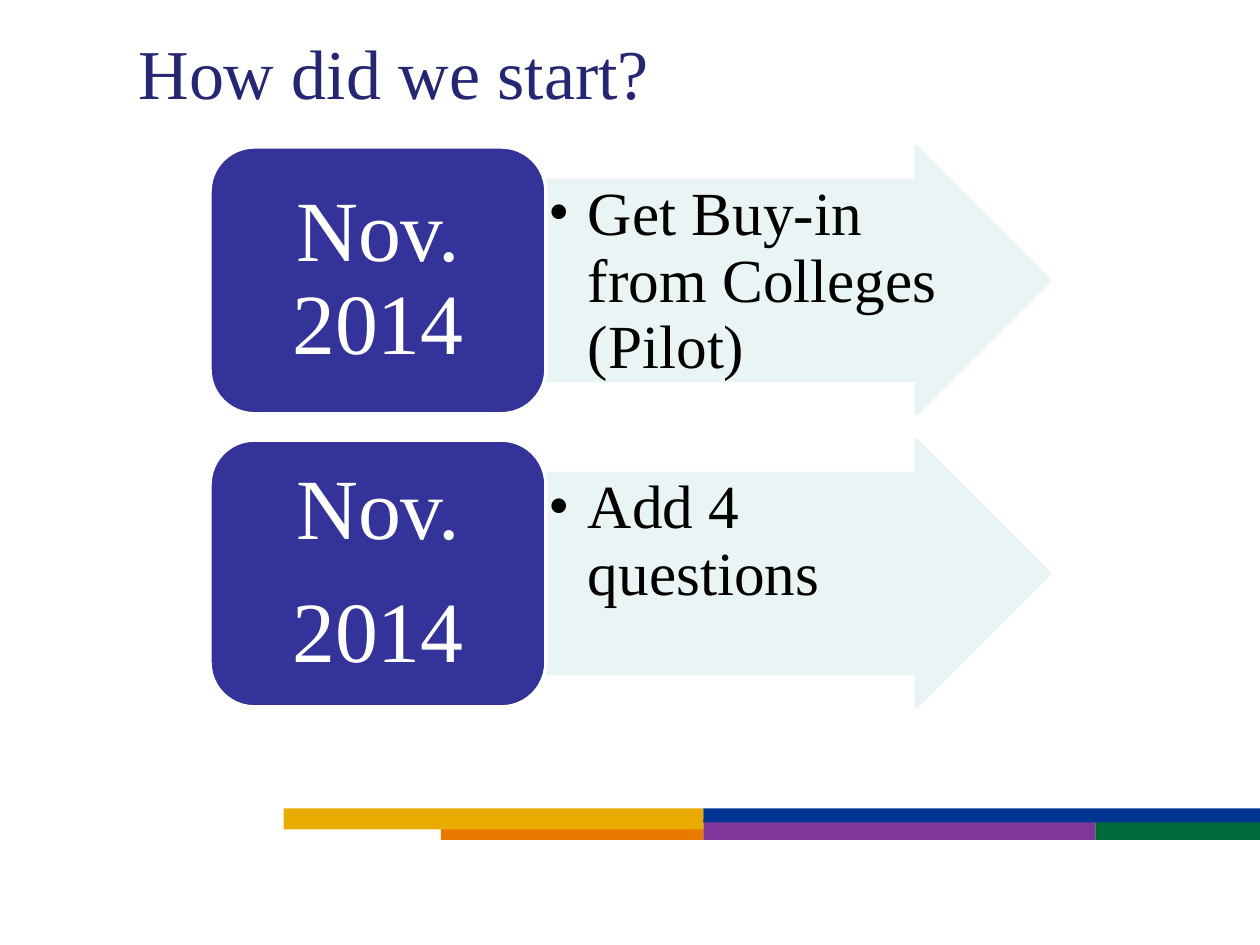
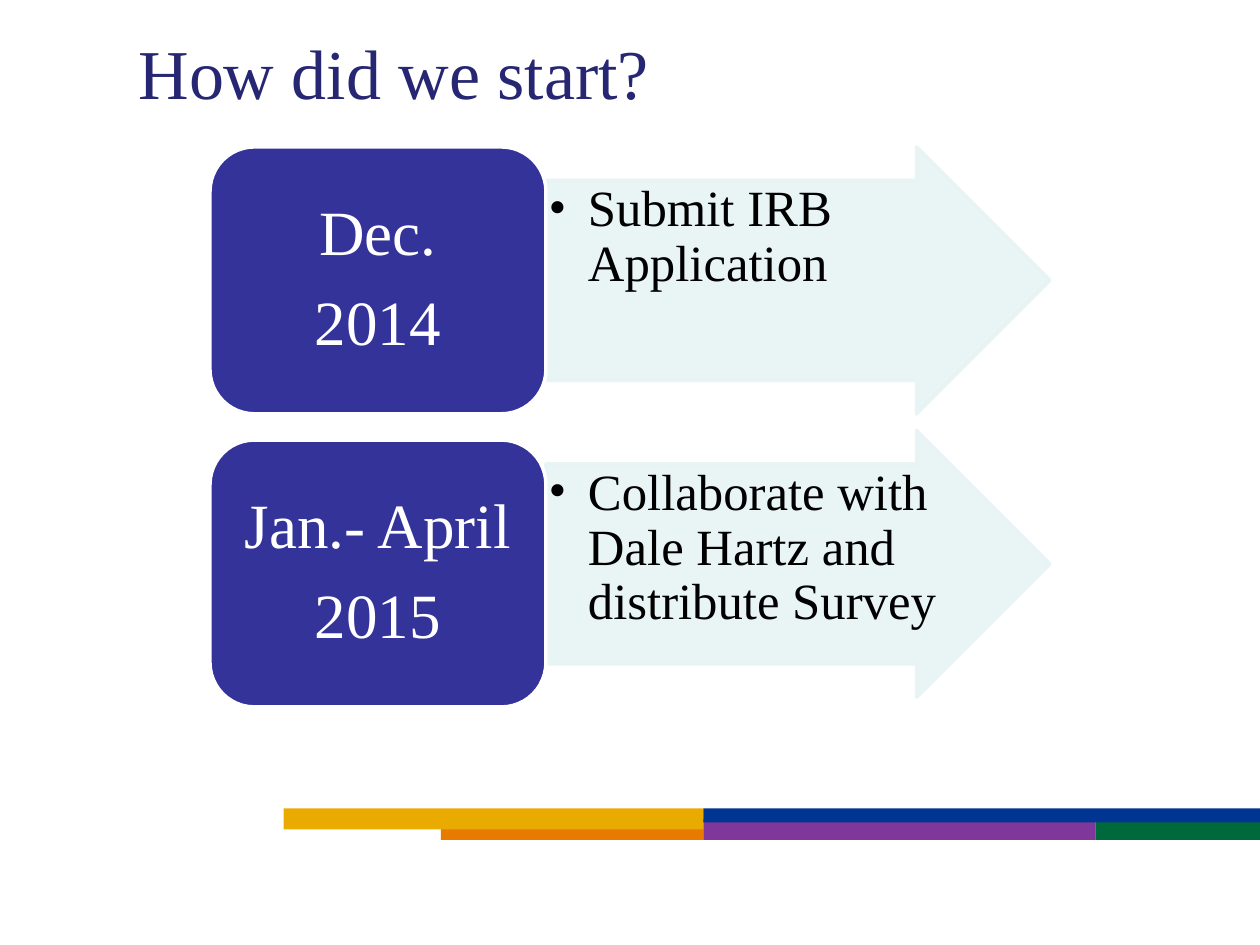
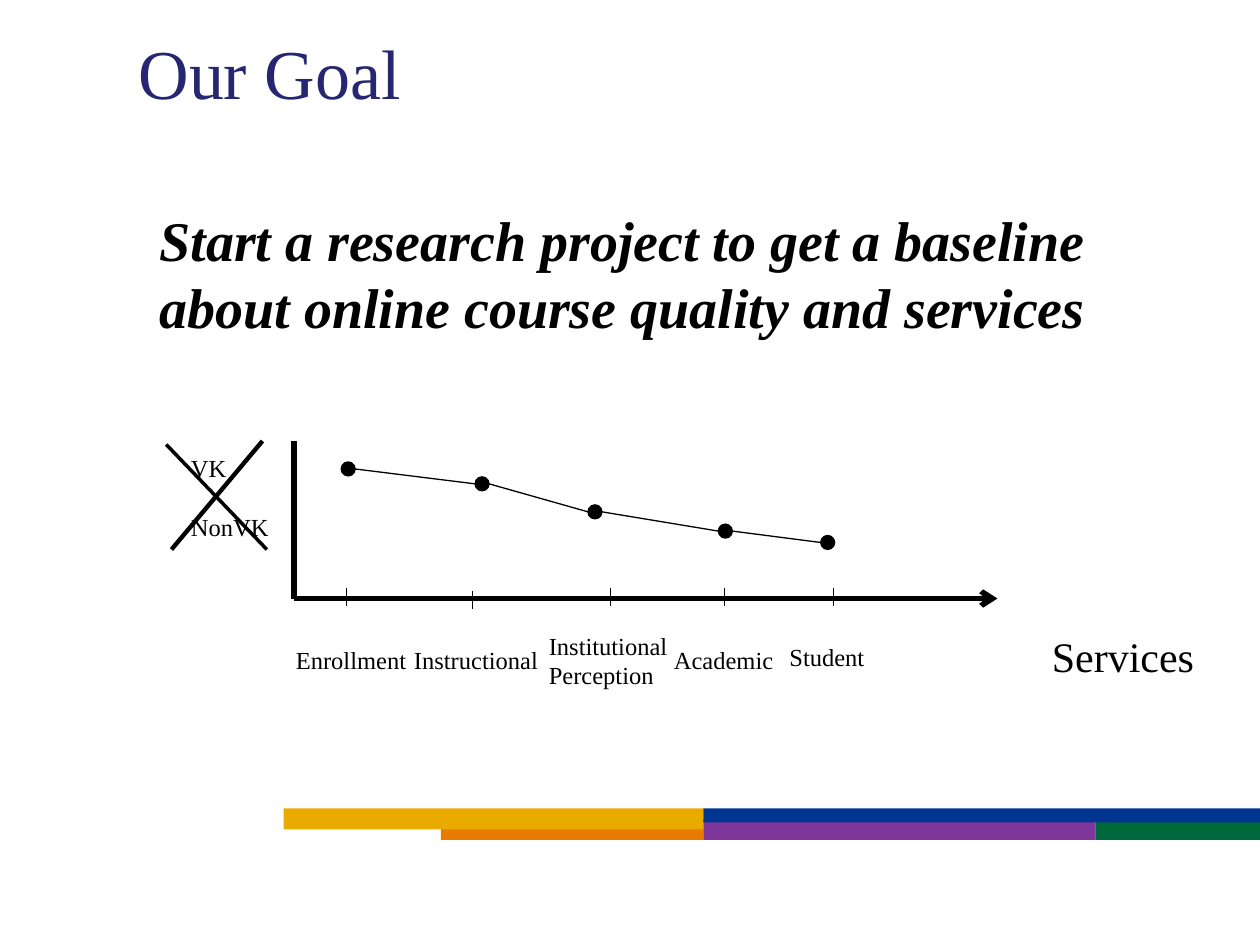
"""Build three slides on how an online course survey project started and its goal."""
from pptx import Presentation
from pptx.dml.color import RGBColor
from pptx.enum.shapes import MSO_CONNECTOR, MSO_SHAPE
from pptx.enum.text import MSO_ANCHOR, MSO_AUTO_SIZE, PP_ALIGN
from pptx.oxml.ns import qn
from pptx.util import Pt
from lxml import etree

RECTANGLE, OVAL = MSO_SHAPE.RECTANGLE, MSO_SHAPE.OVAL
ARROW, ROUNDED = MSO_SHAPE.RIGHT_ARROW, MSO_SHAPE.ROUNDED_RECTANGLE
STRAIGHT = MSO_CONNECTOR.STRAIGHT
TOP, MIDDLE = MSO_ANCHOR.TOP, MSO_ANCHOR.MIDDLE
LEFT, CENTER = PP_ALIGN.LEFT, PP_ALIGN.CENTER
NO_AUTOFIT = MSO_AUTO_SIZE.NONE

FONT = "Times New Roman"
TITLE_BLUE = RGBColor(0x26, 0x26, 0x73)
DATE_BLUE = RGBColor(0x33, 0x33, 0x99)
PALE_TEAL = RGBColor(0xE7, 0xF3, 0xF4)
ORANGE = RGBColor(0xE9, 0x7A, 0x00)
PURPLE = RGBColor(0x80, 0x37, 0x9B)
GOLD = RGBColor(0xEA, 0xAB, 0x00)
GREEN = RGBColor(0x00, 0x69, 0x3C)
NAVY = RGBColor(0x00, 0x35, 0x91)
BLACK = RGBColor(0, 0, 0)
WHITE = RGBColor(0xFF, 0xFF, 0xFF)

BANDS = [
    (ORANGE, 252, 468, 150, 12),
    (PURPLE, 402, 468, 224, 12),
    (GOLD, 162, 462, 240, 12),
    (GREEN, 626, 468, 94, 12),
    (NAVY, 402, 462, 318, 8),
]

TIMELINES = [
    {
        "title": "How did we start?",
        "date_size": 49, "date_gap": 17.2, "date_insets": (14.4, 7.2), "task_size": 35,
        "steps": [
            (["Nov. 2014"], "Get Buy-in from Colleges (Pilot)", 84),
            (["Nov.", "2014"], "Add 4 questions", 251.5),
        ],
    },
    {
        "title": "How did we start?",
        "date_size": 36, "date_gap": 12.6, "date_insets": (10.8, 5.4), "task_size": 29,
        "steps": [
            (["Dec.", "2014"], "Submit IRB Application", 84),
            (["Jan.- April", "2015"], "Collaborate with Dale Hartz and distribute Survey", 246),
        ],
    },
]
STEP_TOP, STEP_PITCH, STEP_HEIGHT = 84, 167.5, 152.5
DATE_LEFT, DATE_WIDTH, TASK_WIDTH = 120, 192, 288
BULLET_INDENT = Pt(22.5)

GOAL_TITLE = "Our Goal"
GOAL = "Start a research project to get a baseline about online course quality and services"
COURSE_TYPES = ["VK", "NonVK"]
SERVICES_AXIS = "Services"
SERVICES = [
    ("Enrollment", (162, 365, 78, 24.5), (198, 336), (199, 268)),
    ("Instructional", (229.5, 365, 91.5, 24.5), (270, 337.5), (275.5, 276.5)),
    ("Institutional Perception", (306.5, 357, 84.5, 41), (349, 336), (340, 292.5)),
    ("Academic", (378, 365, 78, 24.5), (414, 336), (414.5, 303.5)),
    ("Student", (444, 363.5, 65, 24.5), (476.5, 336), (473, 310)),
]
ORIGIN, AXIS_TOP, AXIS_RIGHT = (168, 342), 252, 570
TICK_LENGTH, DOT_RADIUS = 10.5, 4
CROSS_OUT = [((150, 252), (98, 314), 2.5), ((152.5, 314), (95, 254), 2)]


def points(*lengths):
    return [Pt(length) for length in lengths]


def write(frame, lines, size, color=BLACK, align=LEFT, anchor=TOP, gap=0, spacing=None):
    frame.word_wrap = True
    frame.auto_size = NO_AUTOFIT
    frame.vertical_anchor = anchor
    frame.text = "\n".join(lines)
    for index, paragraph in enumerate(frame.paragraphs):
        paragraph.alignment = align
        paragraph.line_spacing = spacing
        if index:
            paragraph.space_before = Pt(gap)
        paragraph.font.name = FONT
        paragraph.font.size = Pt(size)
        paragraph.font.color.rgb = color
    return frame


def add_text(slide, box, lines, size, gap=0):
    return write(slide.shapes.add_textbox(*points(*box)).text_frame, lines, size, gap=gap)


def add_filled(slide, kind, box, fill, outline=None, weight=2):
    shape = slide.shapes.add_shape(kind, *points(*box))
    shape.shadow.inherit = False
    shape.fill.solid()
    shape.fill.fore_color.rgb = fill
    if outline is None:
        shape.line.fill.background()
    else:
        shape.line.color.rgb = outline
        shape.line.width = Pt(weight)
    return shape


def add_line(slide, start, end, weight=0.75, arrow=False):
    line = slide.shapes.add_connector(STRAIGHT, *points(*start, *end))
    line.line.color.rgb = BLACK
    line.line.width = Pt(weight)
    properties = line.element.spPr
    if arrow:
        etree.SubElement(properties.find(qn("a:ln")), qn("a:tailEnd"), type="arrow")
    etree.SubElement(properties, qn("a:effectLst"))


def add_titled_slide(deck, title):
    slide = deck.slides.add_slide(deck.slide_layouts.get_by_name("Title Only"))
    heading = slide.shapes.title
    heading.left, heading.top, heading.width, heading.height = points(72, 13.7, 564, 57.6)
    write(heading.text_frame, [title], 40, TITLE_BLUE).margin_top = Pt(3)
    return slide


def move_bands_to_layout(slide):
    layout_tree = slide.slide_layout.shapes.element
    for number, (color, *box) in enumerate(BANDS, start=101):
        band = add_filled(slide, RECTANGLE, box, color).element
        band.nvSpPr.cNvPr.set("id", str(number))
        layout_tree.append(band)


def add_task(slide, top, task, size):
    box = (DATE_LEFT + DATE_WIDTH, top, TASK_WIDTH, STEP_HEIGHT)
    arrow = add_filled(slide, ARROW, box, PALE_TEAL, PALE_TEAL)
    arrow.adjustments[0], arrow.adjustments[1] = 0.75, 0.5
    for tint in arrow.element.spPr.iter(qn("a:srgbClr")):
        etree.SubElement(tint, qn("a:alpha"), val="90000")
    frame = write(arrow.text_frame, [task], size, spacing=0.9)
    frame.margin_left = frame.margin_right = frame.margin_top = frame.margin_bottom = Pt(1.5)
    properties = frame.paragraphs[0]._p.get_or_add_pPr()
    properties.set("marL", str(BULLET_INDENT))
    properties.set("indent", str(-BULLET_INDENT))
    bullet_font = etree.Element(qn("a:buFont"), typeface=FONT)
    properties.find(qn("a:lnSpc")).addnext(bullet_font)
    bullet_font.addnext(etree.Element(qn("a:buChar"), char="•"))


def add_timeline(slide, timeline):
    for row, (date, task, task_top) in enumerate(timeline["steps"]):
        add_task(slide, task_top, task, timeline["task_size"])
        box = (DATE_LEFT, STEP_TOP + row * STEP_PITCH, DATE_WIDTH, STEP_HEIGHT)
        badge = add_filled(slide, ROUNDED, box, DATE_BLUE, WHITE)
        frame = write(badge.text_frame, date, timeline["date_size"], WHITE, CENTER, MIDDLE,
                      timeline["date_gap"], 0.9)
        side, edge = points(*timeline["date_insets"])
        frame.margin_left = frame.margin_right = side
        frame.margin_top = frame.margin_bottom = edge


def add_goal(slide):
    statement = add_text(slide, (84, 114, 558, 85), [GOAL], 32).paragraphs[0]
    statement.font.bold = statement.font.italic = True

    add_line(slide, (ORIGIN[0], AXIS_TOP), ORIGIN, 3)
    add_line(slide, ORIGIN, (AXIS_RIGHT, ORIGIN[1]), 3, arrow=True)
    add_text(slide, (594, 357, 108, 36), [SERVICES_AXIS], 24)
    add_text(slide, (102, 255.5, 66, 58), COURSE_TYPES, 14, gap=17)
    for start, end, weight in CROSS_OUT:
        add_line(slide, start, end, weight)

    previous = None
    for service, label_box, (tick_x, tick_top), (x, y) in SERVICES:
        add_text(slide, label_box, [service], 14)
        add_line(slide, (tick_x, tick_top), (tick_x, tick_top + TICK_LENGTH))
        dot_box = (x - DOT_RADIUS, y - DOT_RADIUS, 2 * DOT_RADIUS, 2 * DOT_RADIUS)
        add_filled(slide, OVAL, dot_box, BLACK, BLACK, 0.75)
        if previous:
            add_line(slide, (previous[0] + DOT_RADIUS, previous[1]), (x - DOT_RADIUS, y))
        previous = (x, y)


def main():
    deck = Presentation()
    deck.slide_width, deck.slide_height = points(720, 540)
    for timeline in TIMELINES:
        add_timeline(add_titled_slide(deck, timeline["title"]), timeline)
    goal_slide = add_titled_slide(deck, GOAL_TITLE)
    add_goal(goal_slide)
    move_bands_to_layout(goal_slide)
    deck.save("out.pptx")


if __name__ == "__main__":
    main()
